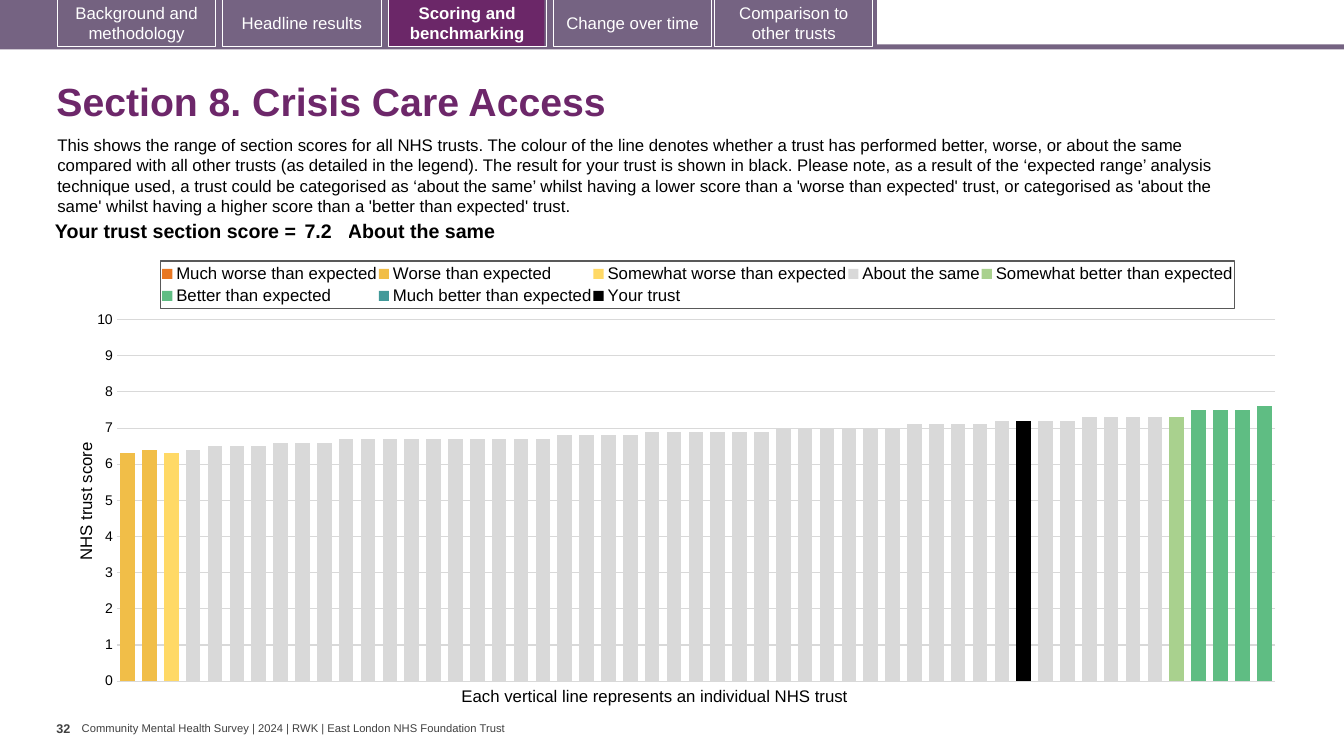
import copy
import pptx
import pptx.util
import pptx.chart.data
import pptx.dml.color
import pptx.enum.chart
import pptx.enum.shapes
import pptx.enum.text
import pptx.oxml
import pptx.oxml.ns

Tone = pptx.dml.color.RGBColor
Pt = pptx.util.Pt
Align = pptx.enum.text.PP_ALIGN
Mid = pptx.enum.text.MSO_ANCHOR.MIDDLE
Fit = pptx.enum.text.MSO_AUTO_SIZE
Enum = pptx.enum.chart
qn = pptx.oxml.ns.qn

BLACK = Tone(0x00, 0x00, 0x00)
WHITE = Tone(0xFF, 0xFF, 0xFF)
GREY = Tone(0x40, 0x40, 0x40)
PALE = Tone(0xD9, 0xD9, 0xD9)
MAUVE = Tone(0x75, 0x63, 0x82)
DUSK = Tone(0x74, 0x62, 0x80)
PLUM = Tone(0x6B, 0x27, 0x68)
HEAD = Tone(0x6D, 0x27, 0x6A)
ORANGE = Tone(0xE8, 0x77, 0x22)
AMBER = Tone(0xF1, 0xBE, 0x48)
YELLOW = Tone(0xFF, 0xD9, 0x66)
LIME = Tone(0xA9, 0xD1, 0x8E)
GREEN = Tone(0x5F, 0xBD, 0x83)
TEAL = Tone(0x41, 0x99, 0x99)

deck = pptx.Presentation()
deck.slide_width = pptx.util.Inches(13.33)
deck.slide_height = pptx.util.Inches(7.5)
COL = deck.slide_width / 100
ROW = deck.slide_height / 100
slide = deck.slides.add_slide(deck.slide_layouts[5])
shapes = slide.shapes


def place(left, top, wide, tall):
    return int(left * COL), int(top * ROW), int(wide * COL), int(tall * ROW)


def dress(font, size, tone, bold=False):
    for key, val in {"name": "Arial", "size": Pt(size), "bold": bold}.items():
        setattr(font, key, val)
    font.color.rgb = tone


title = shapes.title
spot = dict(zip(("left", "top", "width", "height"), place(3.45, 8.93, 93.68, 9.6)))
for key, val in spot.items():
    setattr(title, key, val)
title.text_frame.text = "Section 8. Crisis Care Access"
title.text_frame.vertical_anchor = Mid
para = title.text_frame.paragraphs[0]
for key, val in {"alignment": Align.LEFT, "line_spacing": 0.9}.items():
    setattr(para, key, val)
dress(para.font, 28, HEAD, True)

bars = [
    (0, 5.87, 100, 0.67, MAUVE, None),
    (0, 0, 65.25, 6.27, MAUVE, None),
    (4.43, 0, 11.55, 6.13, DUSK, None),
    (28.95, 0, 11.55, 6.13, PLUM, None),
]
tabs = [
    (4.28, DUSK, "Background and methodology"),
    (16.58, None, "Headline results"),
    (28.88, None, "Scoring and benchmarking"),
    (41.18, MAUVE, "Change over time"),
    (53.18, MAUVE, "Comparison to other trusts"),
]
bars += [(left, -0.13, 11.78, 6.27, tone, name) for left, tone, name in tabs]
for *box, tone, name in bars:
    bar = shapes.add_shape(pptx.enum.shapes.MSO_SHAPE.RECTANGLE, *place(*box))
    bar.shadow.inherit = False
    if tone is None:
        bar.fill.background()
    else:
        bar.fill.solid()
        bar.fill.fore_color.rgb = tone
    if name is None:
        bar.line.fill.background()
        continue
    bar.line.color.rgb = WHITE
    bar.line.width = Pt(0.75)
    bar.text_frame.text = name
    bar.text_frame.vertical_anchor = Mid
    para = bar.text_frame.paragraphs[0]
    para.alignment = Align.CENTER
    dress(para.font, 12, WHITE, name.startswith("Scoring"))

SIZE = 53
same = [
    score
    for score, count in (
        (6.4, 1), (6.5, 3), (6.6, 3), (6.7, 10), (6.8, 4),
        (6.9, 6), (7, 6), (7.1, 4), (7.2, 4), (7.3, 4),
    )
    for _ in range(count)
]
bands = [
    ("Much worse than expected", ORANGE, 0, []),
    ("Worse than expected", AMBER, 0, [6.3, 6.4]),
    ("Somewhat worse than expected", YELLOW, 2, [6.3]),
    ("About the same", PALE, 3, same),
    ("Somewhat better than expected", LIME, 48, [7.3]),
    ("Better than expected", GREEN, 49, [7.5, 7.5, 7.5, 7.6]),
    ("Much better than expected", TEAL, 0, []),
    ("Your trust", BLACK, 41, [7.2]),
]
data = pptx.chart.data.CategoryChartData()
data.categories = [str(num + 1) for num in range(SIZE)]
for name, tone, start, vals in bands:
    data.add_series(name, [None] * start + vals + [None] * (SIZE - start - len(vals)))
chart = shapes.add_chart(
    Enum.XL_CHART_TYPE.COLUMN_CLUSTERED, *place(5.03, 32.93, 91.13, 59.2), data
).chart
dress(chart.font, 10, BLACK)
chart.font.name = "Calibri"
chart.has_title = False
plot = chart.plots[0]
for key, val in {"gap_width": 50, "overlap": 100, "vary_by_categories": False}.items():
    setattr(plot, key, val)
for line, band in zip(plot.series, bands):
    line.format.fill.solid()
    line.format.fill.fore_color.rgb = band[1]

chart.category_axis.visible = False
axis = chart.value_axis
form = {
    "minimum_scale": 0,
    "maximum_scale": 10,
    "major_unit": 1,
    "major_tick_mark": Enum.XL_TICK_MARK.NONE,
    "minor_tick_mark": Enum.XL_TICK_MARK.NONE,
    "has_major_gridlines": True,
    "has_title": True,
}
for key, val in form.items():
    setattr(axis, key, val)
dress(axis.tick_labels.font, 10, BLACK)
axis.format.line.fill.background()
axis.major_gridlines.format.line.color.rgb = PALE
axis.major_gridlines.format.line.width = Pt(0.75)
axis.axis_title.text_frame.text = "NHS trust score"
dress(axis.axis_title.text_frame.paragraphs[0].font, 12, BLACK)

chart.has_legend = True
key_box = chart.legend
key_box.position = Enum.XL_LEGEND_POSITION.TOP
key_box.include_in_layout = False
dress(key_box.font, 12, BLACK)

C = "http://schemas.openxmlformats.org/drawingml/2006/chart"
A = "http://schemas.openxmlformats.org/drawingml/2006/main"
legend = key_box._element
legend.find(qn("c:txPr")).addprevious(pptx.oxml.parse_xml(
    f'<c:spPr xmlns:c="{C}" xmlns:a="{A}"><a:ln w="9525"><a:solidFill>'
    '<a:srgbClr val="595959"/></a:solidFill></a:ln></c:spPr>'
))
area = chart._chartSpace.find(".//" + qn("c:plotArea"))
spots = [
    (area, 0, {"layoutTarget": "inner"}, (0.04, 0.158, 0.946, 0.808)),
    (legend, 1, {}, (0.076, 0.027, 0.877, 0.107)),
    (axis.axis_title._element, 1, {}, (0.004, 0.425)),
]
for node, slot, tags, box in spots:
    for old in node.findall(qn("c:layout")):
        node.remove(old)
    tags = tags | {"xMode": "edge", "yMode": "edge"} | dict(zip("xywh", box))
    inner = "".join(f'<c:{tag} val="{val}"/>' for tag, val in tags.items())
    node.insert(slot, pptx.oxml.parse_xml(
        f'<c:layout xmlns:c="{C}"><c:manualLayout>{inner}</c:manualLayout></c:layout>'
    ))

first = area.find(qn("c:barChart"))
second = copy.deepcopy(first)
first.remove(first.findall(qn("c:ser"))[-1])
for ser in second.findall(qn("c:ser"))[:-1]:
    second.remove(ser)
first.addnext(second)
cat, val = area.find(qn("c:catAx")), area.find(qn("c:valAx"))
cat2, right = copy.deepcopy(cat), copy.deepcopy(val)
val.addnext(right)
right.addnext(cat2)
for tag in ("c:majorGridlines", "c:title"):
    right.remove(right.find(qn(tag)))
for tag, word in (("axPos", "r"), ("tickLblPos", "none"), ("crosses", "max")):
    right.find(qn("c:" + tag)).set("val", word)
ids = {
    cat.find(qn("c:axId")).get("val"): "5001",
    val.find(qn("c:axId")).get("val"): "5002",
}
for node in (second, cat2, right):
    for tag in ("c:axId", "c:crossAx"):
        for ref in node.findall(qn(tag)):
            ref.set("val", ids[ref.get("val")])

intro = (
    "This shows the range of section scores for all NHS trusts. The colour of the line "
    "denotes whether a trust has performed better, worse, or about the same compared with "
    "all other trusts (as detailed in the legend). The result for your trust is shown in "
    "black. Please note, as a result of the ‘expected range’ analysis technique used, a "
    "trust could be categorised as ‘about the same’ whilst having a lower score than a "
    "'worse than expected' trust, or categorised as 'about the same' whilst having a "
    "higher score than a 'better than expected' trust."
)
foot = "Community Mental Health Survey | 2024 | RWK | East London NHS Foundation Trust"
GROW = {"auto_size": Fit.SHAPE_TO_FIT_TEXT}
FLAT = {"margin_left": 0, "margin_right": 0}
ZERO = FLAT | {"margin_top": 0, "margin_bottom": 0, "vertical_anchor": Mid}
notes = [
    (6.08, 95.47, 31.95, 1.73, foot, 8, GREY, False, GROW | ZERO),
    (4.2, 94.67, 1.88, 5.33, "32", 9, GREY, True, FLAT),
    (3.53, 17.2, 90.98, 12.13, intro, 12, BLACK, False, GROW | {"word_wrap": True}),
    (33.6, 90, 30.83, 4, "Each vertical line represents an individual NHS trust",
     12, BLACK, False, GROW),
]
for *box, words, size, tone, bold, form in notes:
    frame = shapes.add_textbox(*place(*box)).text_frame
    for key, val in ({"word_wrap": False} | form).items():
        setattr(frame, key, val)
    frame.text = words
    dress(frame.paragraphs[0].font, size, tone, bold)

grid = shapes.add_table(1, 3, *place(2.63, 28.67, 87.7, 4.13)).table
grid.first_row = grid.horz_banding = False
cells = [
    (19.73, "Your trust section score =", Align.RIGHT, 0.04),
    (3.53, "7.2", Align.LEFT, 0.04),
    (64.43, "About the same", Align.LEFT, 0),
]
for num, (wide, words, align, side) in enumerate(cells):
    grid.columns[num].width = int(wide * COL)
    cell = grid.cell(0, num)
    cell.fill.background()
    for edge, gap in (("left", side), ("right", side), ("top", 0.04), ("bottom", 0.04)):
        setattr(cell, "margin_" + edge, pptx.util.Inches(gap))
    cell.text = words
    para = cell.text_frame.paragraphs[0]
    para.alignment = align
    dress(para.font, 14, BLACK, True)

deck.save("out.pptx")
